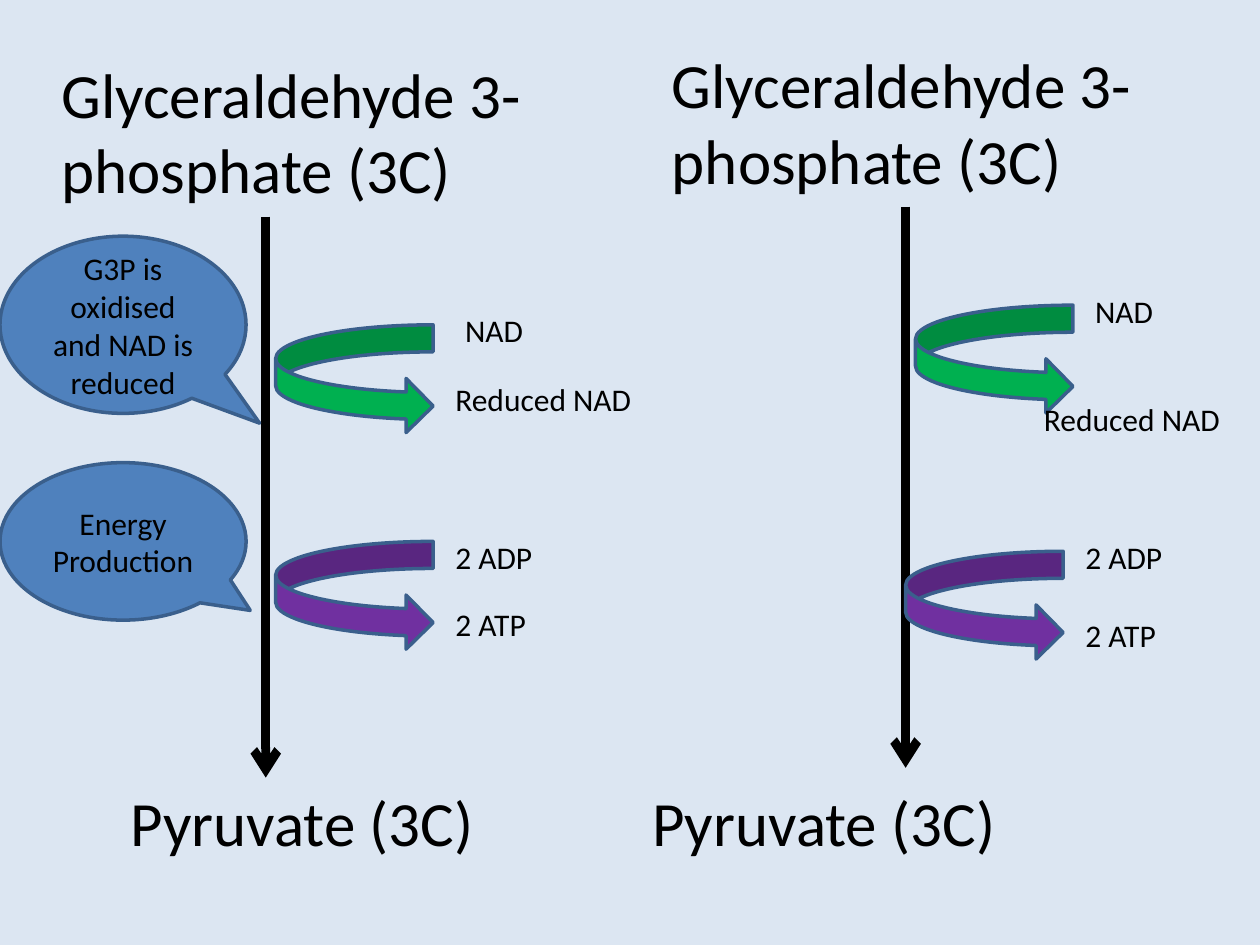
from pptx import Presentation
from pptx import util as u
from pptx.dml.color import RGBColor
from pptx.enum import shapes, text
from pptx.oxml.ns import qn
from lxml import etree

COLORS = {"bg": "DCE6F2", "ink": "000000", "outline": "3A5F8C",
          "nad": "00B050", "atp": "7030A0", "callout": "4F81BD"}
RGB = {name: RGBColor.from_string(value) for name, value in COLORS.items()}

prs = Presentation()
prs.slide_width, prs.slide_height = u.Inches(10), u.Inches(7.5)
s = prs.slides.add_slide(prs.slide_layouts[6])
s.background.fill.solid()
s.background.fill.fore_color.rgb = RGB["bg"]

# Grid of 128 columns by 96 square rows
CELL = prs.slide_width / 128


def write(sp, words, size, frame):
    tf = sp.text_frame
    for name, value in frame.items():
        setattr(tf, name, value)
    p = tf.paragraphs[0]
    r = p.add_run()
    r.text = words
    for name, value in {"name": "Calibri", "size": u.Pt(size)}.items():
        setattr(r.font, name, value)
    r.font.color.rgb = RGB["ink"]
    return p


def add_filled(kind, box, color):
    sp = s.shapes.add_shape(kind, *(round(n * CELL) for n in box))
    sp.shadow.inherit = False
    sp.fill.solid()
    sp.fill.fore_color.rgb = RGB[color]
    sp.line.color.rgb = RGB["outline"]
    sp.line.width = u.Pt(2)
    return sp


# Pathway arrows: column, top row
for col, row in [(27, 22), (92, 21)]:
    x, top, bottom = (round(n * CELL) for n in (col, row, row + 57))
    line = s.shapes.add_connector(shapes.MSO_CONNECTOR.STRAIGHT, x, top, x, bottom)
    line.line.color.rgb = RGB["ink"]
    line.line.width = u.Pt(5)
    etree.SubElement(line.line._get_or_add_ln(), qn("a:tailEnd"), type="arrow")
    etree.SubElement(line._element.spPr, qn("a:effectLst"))

# Curved side-reaction arrows
for col, row, color in [(28, 33, "nad"), (93, 31, "nad"),
                        (28, 55, "atp"), (92, 56, "atp")]:
    add_filled(shapes.MSO_SHAPE.CURVED_RIGHT_ARROW, (col, row, 16, 11), color)

# Compounds and side-reaction labels: words, size, wrap, width, height, corners
labels = [
    ("Glyceraldehyde 3-phosphate (3C)", 36, True, 54, 16.8, [(5, 5), (67, 4)]),
    ("NAD", 18, False, 9.3, 5.1, [(46, 31), (110, 29)]),
    ("Reduced NAD", 18, False, 23.2, 5.1, [(45, 38), (104.8, 40)]),
    ("2 ADP", 18, False, 11.8, 5.1, [(45, 54), (109, 54)]),
    ("2 ATP", 18, False, 11.1, 5.1, [(45, 60.8), (109, 62)]),
    ("Pyruvate (3C)", 36, True, 54, 9.1, [(12, 79), (65, 79)]),
]
for words, size, wrap, width, height, corners in labels:
    for col, row in corners:
        box = (round(n * CELL) for n in (col, row, width, height))
        write(s.shapes.add_textbox(*box), words, size,
              {"word_wrap": wrap, "auto_size": text.MSO_AUTO_SIZE.SHAPE_TO_FIT_TEXT})

# Callouts: words, top row, height, pointer tip
for words, row, height, tip in [
    ("G3P is oxidised and NAD is reduced", 24, 18, (0.555, 0.555)),
    ("Energy Production", 47, 16, (0.517, 0.438)),
]:
    sp = add_filled(shapes.MSO_SHAPE.OVAL_CALLOUT, (0, row, 25, height), "callout")
    sp.adjustments[0], sp.adjustments[1] = tip
    p = write(sp, words, 18,
              {"word_wrap": True, "vertical_anchor": text.MSO_ANCHOR.MIDDLE})
    p.alignment = text.PP_ALIGN.CENTER

prs.save("out.pptx")
